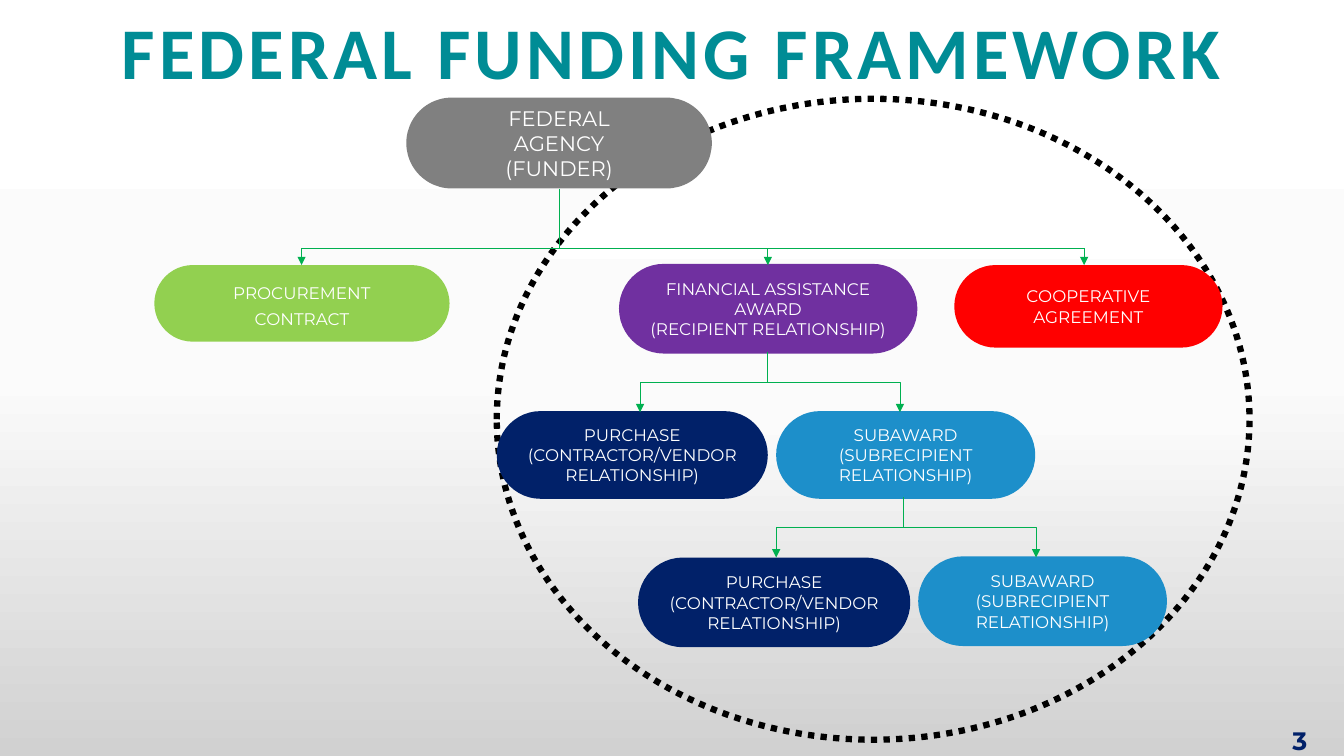
from copy import deepcopy
from dataclasses import dataclass
from itertools import pairwise

from pptx import Presentation
from pptx.dml.color import RGBColor as Rgb
from pptx.dml.fill import FillFormat
from pptx.enum.dml import MSO_LINE
from pptx.enum.shapes import MSO_CONNECTOR as Link, MSO_SHAPE as Preset
from pptx.enum.text import MSO_ANCHOR as Anchor, MSO_AUTO_SIZE as AutoSize, PP_ALIGN as Align
from pptx.oxml.ns import qn
from pptx.oxml.xmlchemy import BaseOxmlElement
from pptx.shapes.connector import Connector
from pptx.slide import Slide
from pptx.text.text import TextFrame
from pptx.util import Cm, Pt


@dataclass(frozen=True)
class Theme:
    title_font: str = "Calibri"
    body_font: str = "Montserrat"
    title_size: float = 52
    number_size: float = 18
    funder_size: float = 15
    label_size: float = 12
    teal: str = "008C95"
    navy: str = "012169"
    blue: str = "1D8FCA"
    purple: str = "7030A0"
    red: str = "FF0000"
    lime: str = "92D050"
    grey: str = "808080"
    green: str = "00B050"
    white: str = "FFFFFF"
    black: str = "000000"
    gradient: tuple[tuple[float, str], ...] = ((0, "FFFFFF"), (0.5, "FBFBFB"), (1, "D1D1D1"))


THEME = Theme()


@dataclass(frozen=True)
class Pill:
    lines: tuple[str, ...]
    left: float
    top: float
    width: float
    height: float
    color: str
    size: float = THEME.label_size
    spacing: float = 1.0


@dataclass(frozen=True)
class Fork:
    """A pair of elbow arrows leaving one point for two lower pills."""
    x: float
    top: float
    bottom: float
    targets: tuple[float, float]


PURCHASE = ("PURCHASE (CONTRACTOR/VENDOR RELATIONSHIP)",)
SUBAWARD = ("SUBAWARD (SUBRECIPIENT RELATIONSHIP)",)
PILLS = (
    Pill(("FEDERAL", "AGENCY", "(FUNDER)"), 10.24, 2.46, 7.7, 2.29, THEME.grey, THEME.funder_size),
    Pill(("PROCUREMENT", "CONTRACT"), 3.89, 6.68, 7.44, 1.93, THEME.lime, spacing=1.25),
    Pill(("FINANCIAL ASSISTANCE AWARD", "(RECIPIENT RELATIONSHIP)"),
         15.6, 6.65, 7.52, 2.26, THEME.purple),
    Pill(("COOPERATIVE", "AGREEMENT"), 24.05, 6.68, 6.76, 2.08, THEME.red),
    Pill(PURCHASE, 12.52, 10.36, 6.83, 2.21, THEME.navy),
    Pill(SUBAWARD, 19.56, 10.36, 6.53, 2.21, THEME.blue),
    Pill(PURCHASE, 16.08, 14.05, 6.86, 2.26, THEME.navy),
    Pill(SUBAWARD, 23.14, 14.02, 6.27, 2.26, THEME.blue),
)
FORKS = (
    Fork(19.33, 8.86, 10.39, (22.68, 16.13)),
    Fork(22.76, 12.52, 14.05, (26.11, 19.56)),
)
STEM_X, STEM_TOP, BUS_Y, BUS_ARROW_END = 14.1, 4.75, 6.25, 6.68
BUS_DROPS = (7.6, 19.35, 27.32)


def paint_gradient(fill: FillFormat, holder: BaseOxmlElement) -> None:
    """Fill with the theme's three stops, running from top to bottom."""
    fill.gradient()
    fill.gradient_angle = 270
    stop_list = next(holder.iter(qn("a:gsLst")))
    stop_list.append(deepcopy(stop_list[0]))
    for stop, (position, color) in zip(fill.gradient_stops, THEME.gradient):
        stop.position = position
        stop.color.rgb = Rgb.from_string(color)


def write(frame: TextFrame, lines: tuple[str, ...], font: str, size: float, color: str,
          bold: bool = False, spacing: float = 1.0) -> None:
    frame.word_wrap = True
    frame.auto_size = AutoSize.NONE
    frame.vertical_anchor = Anchor.MIDDLE
    frame.text = "\n".join(lines)
    for para in frame.paragraphs:
        para.alignment = Align.CENTER
        para.line_spacing = spacing
        para.font.name = font
        para.font.size = Pt(size)
        para.font.bold = bold
        para.font.color.rgb = Rgb.from_string(color)


def add_title(page: Slide, text: str) -> None:
    title = page.shapes.title
    title.left, title.top, title.width, title.height = Cm(0), Cm(0.03), Cm(33.87), Cm(2.49)
    write(title.text_frame, (text,), THEME.title_font, THEME.title_size, THEME.teal, bold=True)
    span = title.text_frame.paragraphs[0].runs[0]
    span.font._element.set("spc", "300")


def add_scope_ellipse(page: Slide) -> None:
    ellipse = page.shapes.add_shape(Preset.OVAL, Cm(12.52), Cm(2.49), Cm(18.97), Cm(16.15))
    ellipse.shadow.inherit = False
    paint_gradient(ellipse.fill, ellipse._element)
    ellipse.line.color.rgb = Rgb.from_string(THEME.black)
    ellipse.line.width = Pt(4.5)
    ellipse.line.dash_style = MSO_LINE.ROUND_DOT


def add_pill(page: Slide, pill: Pill) -> None:
    box = page.shapes.add_shape(Preset.ROUNDED_RECTANGLE, Cm(pill.left), Cm(pill.top),
                                Cm(pill.width), Cm(pill.height))
    box.adjustments[0] = 0.5
    box.shadow.inherit = False
    box.fill.solid()
    box.fill.fore_color.rgb = Rgb.from_string(pill.color)
    box.line.fill.background()
    write(box.text_frame, pill.lines, THEME.body_font, pill.size, THEME.white,
          spacing=pill.spacing)


def add_link(page: Slide, kind: Link, x1: float, y1: float, x2: float, y2: float,
             arrow: bool = False) -> Connector:
    link = page.shapes.add_connector(kind, Cm(x1), Cm(y1), Cm(x2), Cm(y2))
    link.line.color.rgb = Rgb.from_string(THEME.green)
    link.line.width = Pt(0.5)
    properties = link._element.spPr
    if arrow:
        line = properties.find(qn("a:ln"))
        line.append(line.makeelement(qn("a:tailEnd"), {"type": "triangle"}))
    properties.append(properties.makeelement(qn("a:effectLst"), {}))
    return link


def add_fork(page: Slide, fork: Fork) -> None:
    """Draw each elbow lying down, then turn it so that it leaves downwards."""
    drop = fork.bottom - fork.top
    middle_y = (fork.top + fork.bottom) / 2
    for target in fork.targets:
        middle_x = (fork.x + target) / 2
        reach = abs(target - fork.x)
        elbow = add_link(page, Link.ELBOW, middle_x - drop / 2, middle_y - reach / 2,
                         middle_x + drop / 2, middle_y + reach / 2, arrow=True)
        frame = elbow._element.spPr.find(qn("a:xfrm"))
        to_right = target > fork.x
        frame.set("rot", str((270 if to_right else 90) * 60000))
        if to_right:
            frame.set("flipH", "1")


def add_top_branch(page: Slide) -> None:
    add_link(page, Link.STRAIGHT, STEM_X, STEM_TOP, STEM_X, BUS_Y)
    for start, end in pairwise(sorted((STEM_X, *BUS_DROPS))):
        add_link(page, Link.STRAIGHT, start, BUS_Y, end, BUS_Y)
    for x in BUS_DROPS:
        add_link(page, Link.STRAIGHT, x, BUS_Y, x, BUS_ARROW_END, arrow=True)


def add_page_number(page: Slide, number: str) -> None:
    box = page.shapes.add_textbox(Cm(31.98), Cm(18.16), Cm(1.55), Cm(1.02))
    write(box.text_frame, (number,), THEME.body_font, THEME.number_size, THEME.navy, bold=True)


def main() -> None:
    deck = Presentation()
    deck.slide_width, deck.slide_height = Cm(33.87), Cm(19.05)
    page = deck.slides.add_slide(deck.slide_layouts[5])
    paint_gradient(page.background.fill, page._element)
    add_title(page, "FEDERAL FUNDING FRAMEWORK")
    add_scope_ellipse(page)
    for pill in PILLS:
        add_pill(page, pill)
    add_top_branch(page)
    for fork in FORKS:
        add_fork(page, fork)
    add_page_number(page, "3")
    deck.save("out.pptx")


if __name__ == "__main__":
    main()
